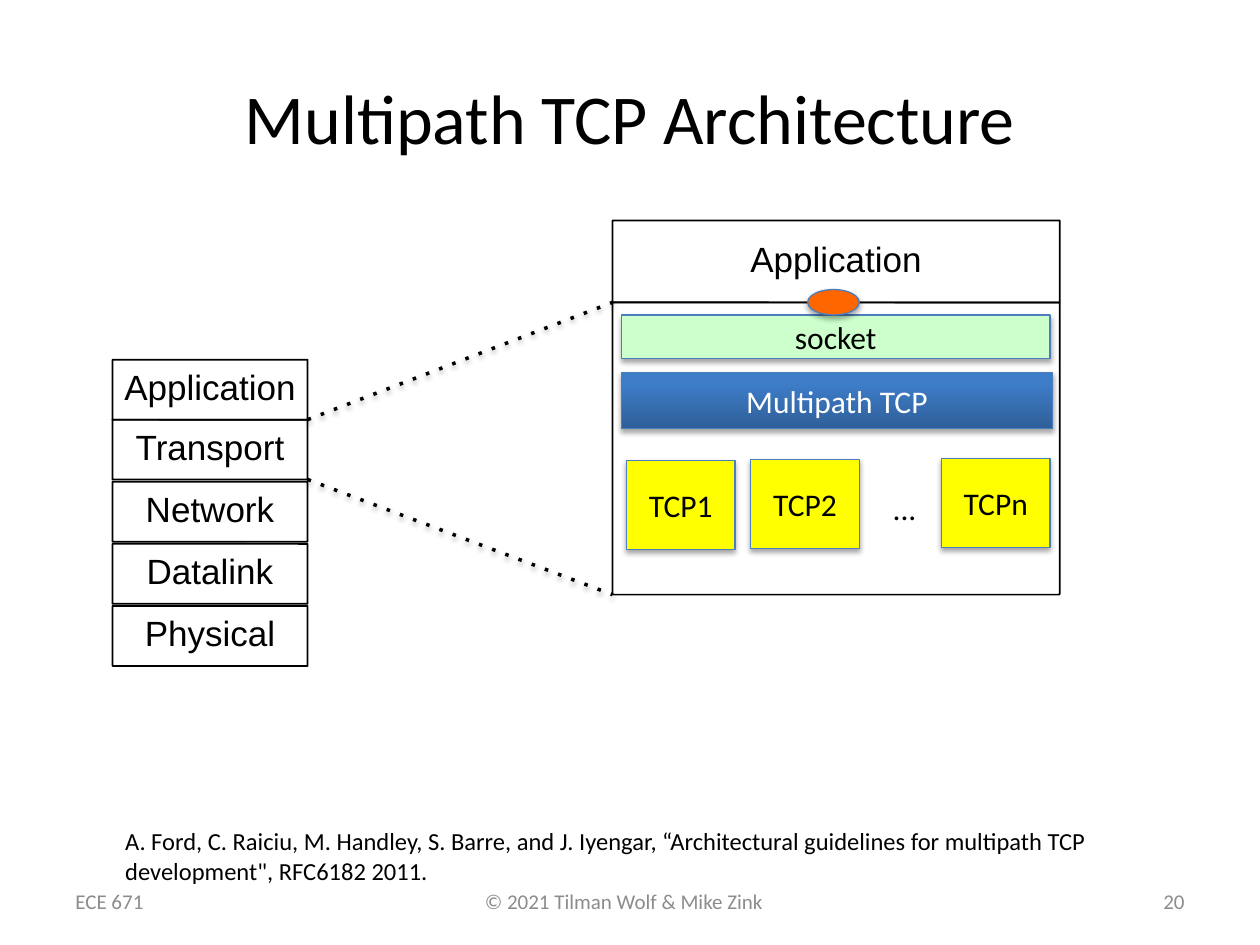
import lxml.etree
import pptx
import pptx.dml.color
import pptx.enum.shapes
import pptx.enum.text
import pptx.oxml.ns
import pptx.util

Pt = pptx.util.Pt
qn = pptx.oxml.ns.qn
KIND = pptx.enum.shapes.MSO_SHAPE
ALIGN = pptx.enum.text.PP_ALIGN
ANCHOR = pptx.enum.text.MSO_ANCHOR
HUES = {
    "black": "000000", "white": "FFFFFF", "gray": "8C8C8C", "edge": "4B7EBC",
    "yellow": "FFFF00", "mint": "CCFFCC", "orange": "FF6600",
    "deep": "2F5F99", "blue": "3D7CC7",
}


def hue(name):
    return pptx.dml.color.RGBColor.from_string(HUES[name])


def sub(node, tag, **attrs):
    return lxml.etree.SubElement(node, qn(tag), attrs)


class Deck:
    """Holds the style and the current slide; lengths are in points."""
    font = "Calibri"
    label = "Arial"

    def __init__(self, wide, high):
        self.show = pptx.Presentation()
        self.show.slide_width, self.show.slide_height = Pt(wide), Pt(high)
        self.slide = self.show.slides.add_slide(self.show.slide_layouts[6])
        self.shapes = self.slide.shapes

    def words(self, shape, text, size, color, font, align, anchor):
        frame = shape.text_frame
        frame.text = text
        frame.vertical_anchor = anchor
        para = frame.paragraphs[0]
        para.alignment = align
        for run in para.runs:
            run.font.size, run.font.name = Pt(size), font
            run.font.color.rgb = hue(color)
        return frame

    def text(self, box, text, size, color="black", align=ALIGN.LEFT,
             anchor=ANCHOR.TOP, wrap=True):
        shape = self.shapes.add_textbox(*map(Pt, box))
        frame = self.words(shape, text, size, color, self.font, align, anchor)
        frame.word_wrap = wrap

    def shade(self, props, alpha, drop):
        """Fill the effect list with a soft shadow straight below."""
        effect = props.find(qn("a:effectLst"))
        if effect is None:
            effect = sub(props, "a:effectLst")
        outer = sub(effect, "a:outerShdw", blurRad=str(Pt(3.1)),
                    dist=str(Pt(drop)), dir="5400000", rotWithShape="0")
        black = sub(outer, "a:srgbClr", val=HUES["black"])
        sub(black, "a:alpha", val=str(alpha * 1000))

    def shape(self, kind, box, edge, width):
        shape = self.shapes.add_shape(kind, *map(Pt, box))
        shape.shadow.inherit = False
        shape.line.color.rgb, shape.line.width = hue(edge), Pt(width)
        return shape

    def layer(self, box, text=""):
        """Outlined, unfilled box of a protocol stack."""
        shape = self.shape(KIND.ROUNDED_RECTANGLE, box, "black", 1)
        shape.adjustments[0] = 0.004
        shape.fill.background()
        if text:
            frame = self.words(shape, text, 20, "black", self.label,
                               ALIGN.CENTER, ANCHOR.MIDDLE)
            frame.margin_left = frame.margin_right = 0
            frame.margin_top = frame.margin_bottom = 0
            frame.paragraphs[0].line_spacing = 0.84

    def block(self, box, fill, text="", color="black", kind=KIND.RECTANGLE):
        """Filled box with a shadow; a pair of colours runs bottom to top."""
        shape = self.shape(kind, box, "edge", 0.75)
        if isinstance(fill, tuple):
            shape.fill.gradient()
            shape.fill.gradient_angle = 90
            for stop, name, place in zip(shape.fill.gradient_stops, fill, (0, 0.8)):
                stop.color.rgb, stop.position = hue(name), place
        else:
            shape.fill.solid()
            shape.fill.fore_color.rgb = hue(fill)
        self.shade(shape.element.spPr, 35, 1.8)
        if text:
            self.words(shape, text, 18, color, self.font,
                       ALIGN.CENTER, ANCHOR.MIDDLE)

    def line(self, start, end, width, dash, shadow=False):
        line = self.shapes.add_connector(
            pptx.enum.shapes.MSO_CONNECTOR.STRAIGHT, *map(Pt, start + end))
        line.line.color.rgb, line.line.width = hue("black"), Pt(width)
        props = line.element.spPr
        sub(props.find(qn("a:ln")), "a:prstDash", val=dash)
        if shadow:
            self.shade(props, 38, 1.6)
        else:
            sub(props, "a:effectLst")


def main():
    deck = Deck(720, 540)
    deck.text((270, 504, 176, 36), "© 2021 Tilman Wolf & Mike Zink", 12,
              "gray", wrap=False)
    deck.text((36, 21.6, 648, 90), "Multipath TCP Architecture", 40,
              align=ALIGN.CENTER, anchor=ANCHOR.MIDDLE)
    for left, text, align in ((36, "ECE 671", ALIGN.LEFT),
                              (516, "20", ALIGN.RIGHT)):
        deck.text((left, 500.5, 168, 28.8), text, 12, "gray", align,
                  ANCHOR.MIDDLE)

    # Protocol stack on the left
    left, wide, high, step = 64.3, 111.5, 34.2, 35.5
    right, top = left + wide, 239.8
    for side in (left, right):
        deck.line((side, 331), (side, 289.5), 1, "sysDashDotDot")
    names = ("Transport", "Network", "Datalink", "Physical")
    for row, name in reversed(list(enumerate(names))):
        deck.layer((left, top + row * step, wide, high), name)
    deck.layer((left, top - high, wide, high), "Application")

    # Transport layer enlarged on the right
    zoom, span, roof, floor = 350, 255.6, 172.8, 339.8
    deck.layer((zoom, roof, span, floor - roof))
    deck.block((355, 213, 246.5, 32), ("deep", "blue"), "Multipath TCP", "white")
    deck.block((355, 180, 245, 25), "mint", "socket")
    for x, y, name in ((358, 263, "TCP1"), (429, 262.4, "TCP2"),
                       (538, 262, "TCPn")):
        deck.block((x, y, 62, 51), "yellow", name)
    deck.text((503, 276, 28, 29), "...", 18, wrap=False)
    deck.layer((zoom, 126, span, roof - 126), "Application")
    deck.block((461.5, 165.5, 29.5, 14.5), "orange", kind=KIND.OVAL)
    for low, far in ((top, roof), (top + high, floor)):
        deck.line((right, low), (zoom, far), 2, "dot", shadow=True)

    deck.text((64.5, 468.7, 604, 41),
              "A. Ford, C. Raiciu, M. Handley, S. Barre, and J. Iyengar, "
              "“Architectural guidelines for multipath TCP development\", "
              "RFC6182 2011.", 14)
    deck.show.save("out.pptx")


if __name__ == "__main__":
    main()
